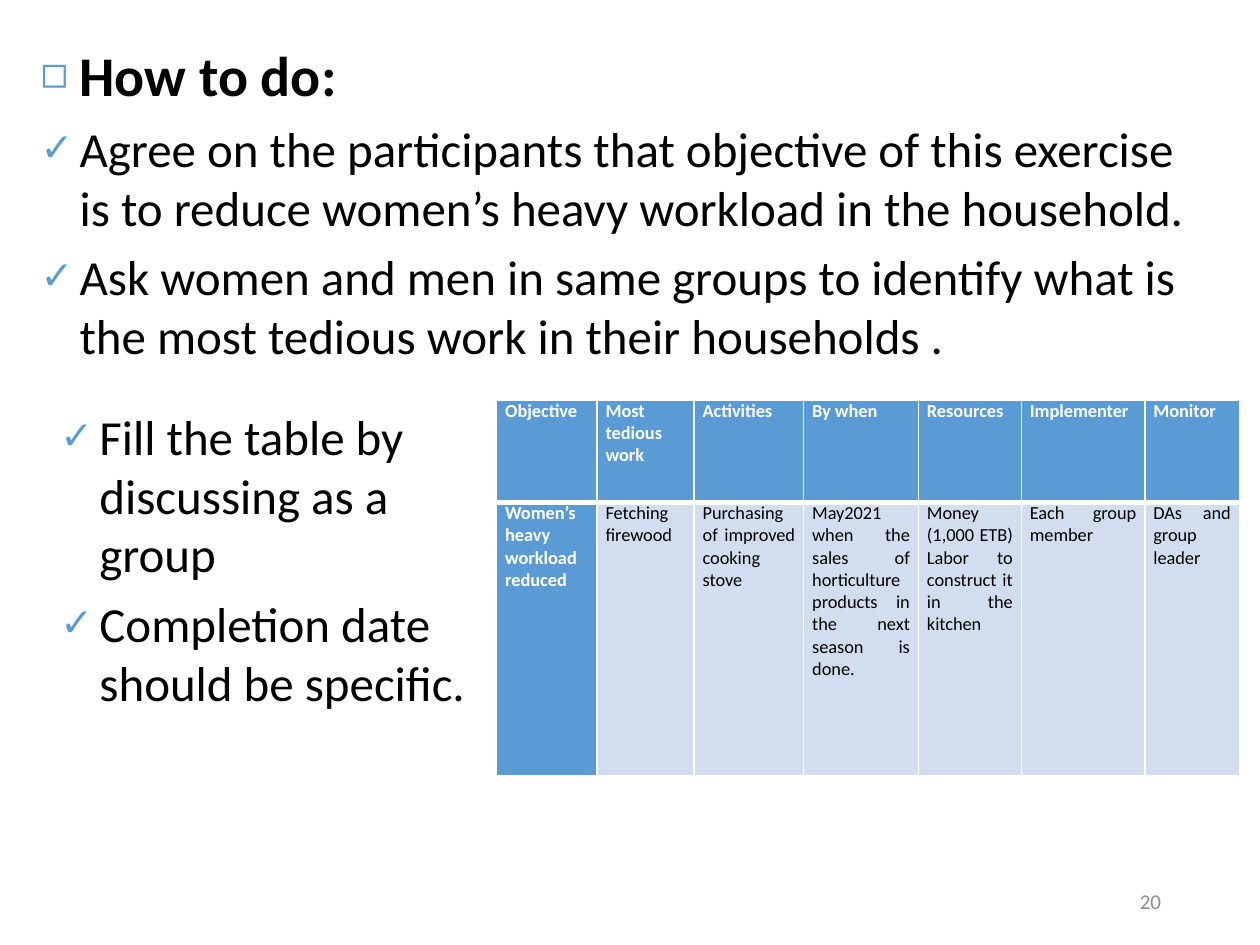
from lxml.etree import SubElement
from pptx import Presentation
from pptx.dml.color import RGBColor
from pptx.enum.text import MSO_ANCHOR, MSO_AUTO_SIZE, PP_ALIGN
from pptx.oxml import parse_xml
from pptx.oxml.ns import nsdecls, qn
from pptx.util import Pt

COLORS = {"text": "000000", "accent": "5B9BD5", "pale": "D2DEEF",
          "white": "FFFFFF", "number": "8C8C8C"}
FONT = "Calibri"
TICK = "✓"
STEPS = [
    ("◻", "How to do:", 32, True),
    (TICK, "Agree on the participants that objective of this exercise is to "
           "reduce women’s heavy workload in the household.", 28, False),
    (TICK, "Ask women and men in same groups to identify what is the most "
           "tedious work in their households .", 28, False),
]
TABLE_NOTES = [
    (TICK, "Fill the table by discussing as a group", 28, False),
    (TICK, "Completion date should be specific.", 28, False),
]
COLUMN_WIDTHS = [57.4, 55.5, 62.6, 65.6, 58.8, 70.6, 54]
ROW_HEIGHTS = [58.5, 156.2]
PLAN = [
    ["Objective", "Most tedious work", "Activities", "By when", "Resources",
     "Implementer", "Monitor"],
    ["Women’s heavy workload reduced", "Fetching firewood",
     "Purchasing of improved cooking stove",
     "May2021 when the sales of horticulture products in the next season is done.",
     "Money (1,000 ETB) Labor to construct it in the kitchen",
     "Each group member", "DAs and group leader"],
]


def style_font(font, size, color, bold=False):
    """Set face, size, colour and weight."""
    font.name, font.size, font.bold = FONT, Pt(size), bold
    font.color.rgb = RGBColor.from_string(COLORS[color])


def set_bullet(paragraph, character):
    """Give a paragraph a hanging, accent-coloured bullet."""
    properties = paragraph._p.get_or_add_pPr()
    properties.set("marL", str(Pt(28.8)))
    properties.set("indent", str(Pt(-22.3)))
    color = SubElement(properties, qn("a:buClr"))
    SubElement(color, qn("a:srgbClr"), val=COLORS["accent"])
    SubElement(properties, qn("a:buSzPct"), val="80000")
    SubElement(properties, qn("a:buChar"), char=character)


def fill_list(body, box, items):
    """Place a body placeholder in the box and fill it with bulleted items."""
    body.left, body.top, body.width, body.height = map(Pt, box)
    frame = body.text_frame
    frame.auto_size = MSO_AUTO_SIZE.NONE
    for index, (character, text, size, bold) in enumerate(items):
        paragraph = frame.add_paragraph() if index else frame.paragraphs[0]
        paragraph.text = text
        paragraph.space_before = Pt(6)
        set_bullet(paragraph, character)
        style_font(paragraph.font, size, "text", bold)


def set_borders(cell, widths):
    """Draw white cell borders, with widths given by side."""
    properties = cell._tc.get_or_add_tcPr()
    for position, (side, width) in enumerate(widths.items()):
        properties.insert(position, parse_xml(
            f'<a:ln{side} {nsdecls("a")} w="{Pt(width)}"><a:solidFill>'
            f'<a:srgbClr val="{COLORS["white"]}"/></a:solidFill></a:ln{side}>'))


def add_plan_table(slide, box):
    """Add the action plan table with a header row and header column."""
    table = slide.shapes.add_table(len(PLAN), len(PLAN[0]), *map(Pt, box)).table
    table.first_col = True
    for column, width in zip(table.columns, COLUMN_WIDTHS):
        column.width = Pt(width)
    for r, (texts, height) in enumerate(zip(PLAN, ROW_HEIGHTS)):
        table.rows[r].height = Pt(height)
        for c, text in enumerate(texts):
            cell = table.cell(r, c)
            heading = r == 0 or c == 0
            cell.margin_left = cell.margin_right = Pt(4.9)
            cell.margin_top = cell.margin_bottom = 0
            cell.fill.solid()
            cell.fill.fore_color.rgb = RGBColor.from_string(
                COLORS["accent" if heading else "pale"])
            set_borders(cell, {"L": 1, "R": 1, "T": 3 if r else 1, "B": 1 if r else 3})
            paragraph = cell.text_frame.paragraphs[0]
            paragraph.text = text
            paragraph.alignment = PP_ALIGN.JUSTIFY
            style_font(paragraph.font, 10.5, "white" if heading else "text", heading)


def add_page_number(slide, box, number):
    """Add the right-aligned page number."""
    frame = slide.shapes.add_textbox(*map(Pt, box)).text_frame
    frame.word_wrap = True
    frame.vertical_anchor = MSO_ANCHOR.MIDDLE
    paragraph = frame.paragraphs[0]
    paragraph.text = number
    paragraph.alignment = PP_ALIGN.RIGHT
    style_font(paragraph.font, 12, "number")


def main():
    """Build and save the slide."""
    deck = Presentation()
    deck.slide_width, deck.slide_height = Pt(720), Pt(540)
    slide = deck.slides.add_slide(deck.slide_layouts.get_by_name("Two Content"))
    title, steps, table_notes = slide.placeholders
    title.element.getparent().remove(title.element)
    fill_list(steps, (9.5, 19.5, 690, 266.5), STEPS)
    add_page_number(slide, (508.5, 500.5, 162, 28.8), "20")
    fill_list(table_notes, (20.8, 228.5, 279.5, 266.5), TABLE_NOTES)
    add_plan_table(slide, (283.8, 228.5, sum(COLUMN_WIDTHS), sum(ROW_HEIGHTS)))
    deck.save("out.pptx")


if __name__ == "__main__":
    main()
